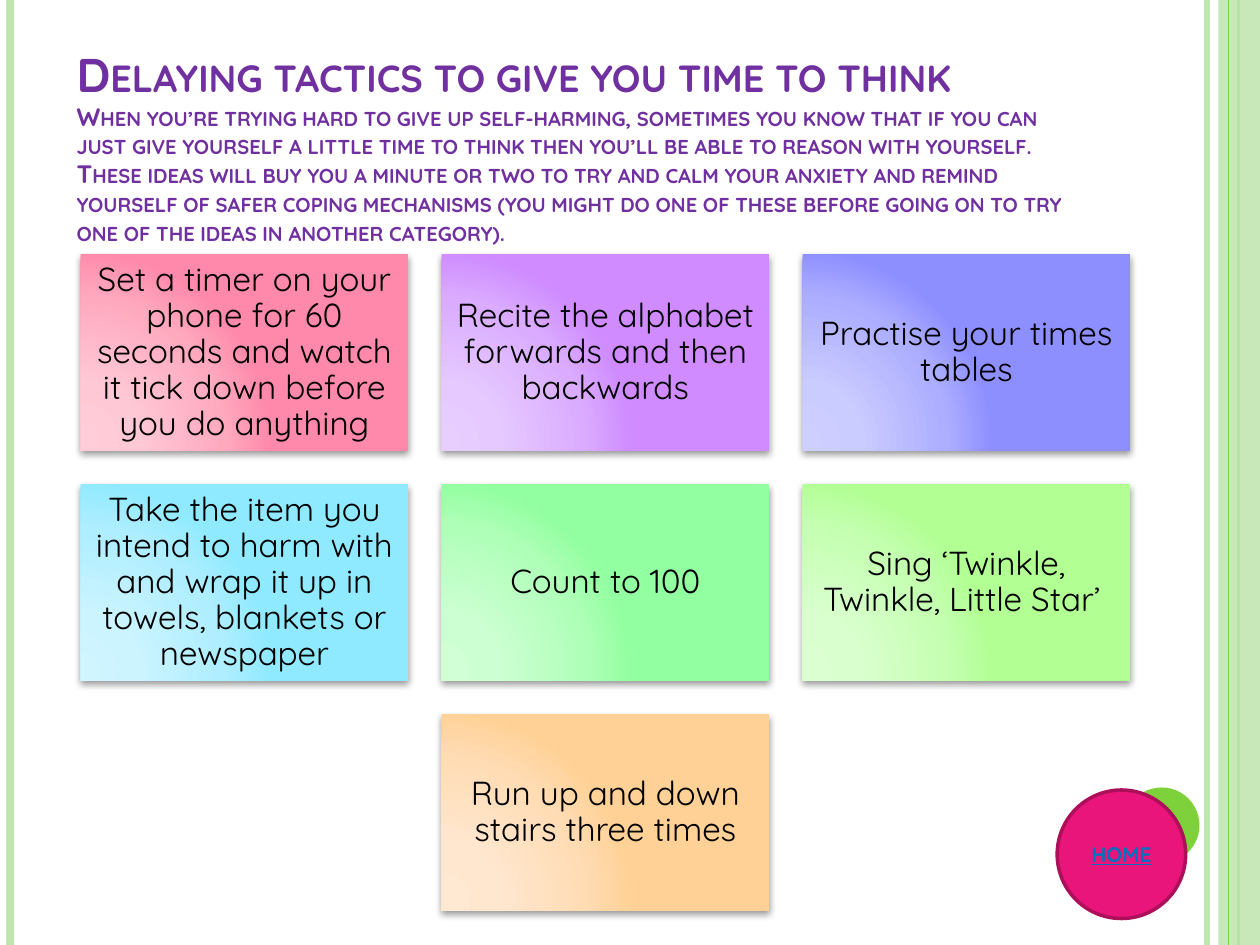
from dataclasses import dataclass

from lxml import etree
from pptx import Presentation
from pptx.dml.color import RGBColor
from pptx.enum.shapes import MSO_CONNECTOR, MSO_SHAPE
from pptx.enum.text import MSO_ANCHOR, PP_ALIGN
from pptx.oxml import parse_xml
from pptx.oxml.ns import nsdecls, qn
from pptx.util import Inches, Pt

STRAIGHT = MSO_CONNECTOR.STRAIGHT
RECTANGLE, OVAL = MSO_SHAPE.RECTANGLE, MSO_SHAPE.OVAL
MIDDLE, BOTTOM = MSO_ANCHOR.MIDDLE, MSO_ANCHOR.BOTTOM
CENTER = PP_ALIGN.CENTER


@dataclass(frozen=True)
class Theme:
    font: str = "Quicksand"
    heading: str = "7030A0"
    ink: str = "000000"
    pale_green: str = "C0E5AF"
    green: str = "7FD13B"
    pink: str = "EA157A"
    dark_pink: str = "AD105A"
    link: str = "0070C0"
    title_size: float = 27
    intro_size: float = 14.4
    tile_size: float = 19
    button_size: float = 12


THEME = Theme()


def add_plain_shape(kind, left, top, width, height, color):
    shape = slide.shapes.add_shape(
        kind, Inches(left), Inches(top), Inches(width), Inches(height))
    shape.shadow.inherit = False
    shape.fill.solid()
    shape.fill.fore_color.rgb = RGBColor.from_string(color)
    shape.line.fill.background()
    return shape


def style_text(paragraph, size, color, bold=False):
    font = paragraph.font
    font.name, font.size, font.bold = THEME.font, Pt(size), bold
    font.color.rgb = RGBColor.from_string(color)


prs = Presentation()
prs.slide_width, prs.slide_height = Inches(10), Inches(7.5)
slide = prs.slides.add_slide(prs.slide_layouts[6])

# Side stripes; None marks the place of the translucent band
stripes = [
    (9.58, THEME.pale_green, 3),
    (0.08, THEME.pale_green, 4.5),
    (9.83, THEME.green, 1.5),
    (None, THEME.pale_green, 0),
    (9.75, THEME.green, 0.75),
]
for x, color, weight in stripes:
    if x is None:
        band = add_plain_shape(RECTANGLE, 9.67, 0, 0.33, 7.5, color)
        band_color = band._element.spPr.find(qn("a:solidFill"))[0]
        etree.SubElement(band_color, qn("a:alpha"), val="87000")
        continue
    stripe = slide.shapes.add_connector(
        STRAIGHT, Inches(x), 0, Inches(x), prs.slide_height)
    stripe.line.color.rgb = RGBColor.from_string(color)
    stripe.line.width = Pt(weight)
    etree.SubElement(stripe._element.spPr, qn("a:effectLst"))

# Green dot behind the home button
add_plain_shape(OVAL, 8.92, 6.25, 0.6, 0.6, THEME.green)

# Title and introduction in small caps
heading = slide.shapes.add_textbox(
    Inches(0.51), Inches(0.76), Inches(8.17), Inches(1.25)).text_frame
heading.word_wrap = True
heading.vertical_anchor = BOTTOM
heading_line = heading.paragraphs[0]
style_text(heading_line, THEME.title_size, THEME.heading, bold=True)
heading_line.line_spacing = 0.95
title = heading_line.add_run()
title.text = "Delaying tactics to give you time to think"
heading_line.add_line_break()
intro = heading_line.add_run()
intro.text = (
    "When you’re trying hard to give up self-harming, sometimes you know that "
    "if you can just give yourself a little time to think then you’ll be able "
    "to reason with yourself. These ideas will buy you a minute or two to try "
    "and calm your anxiety and remind yourself of safer coping mechanisms (you "
    "might do one of these before going on to try one of the ideas in another "
    "category).")
intro.font.size = Pt(THEME.intro_size)
for run in (title, intro):
    run.font._element.set("cap", "small")

# Tactic tiles: column, row, text, gradient from pale to strong
tactics = [
    (0, 0, "Set a timer on your phone for 60 seconds and watch it tick down "
           "before you do anything", "FFCDD9 FFC8D5 FFA9BF FF89AA"),
    (1, 0, "Recite the alphabet forwards and then backwards",
     "E8CEFF E6C9FF DAABFF CF8BFF"),
    (2, 0, "Practise your times tables", "CFCFFF CACBFF ADAEFF 8E8FFF"),
    (0, 1, "Take the item you intend to harm with and wrap it up in towels, "
           "blankets or newspaper", "D0F5FF CBF4FF AEEEFF 90EAFF"),
    (1, 1, "Count to 100", "D1FFD6 CCFFD2 B0FFB9 92FFA0"),
    (2, 1, "Sing ‘Twinkle, Twinkle, Little Star’ ",
     "DCFFD2 D9FFCE C5FFB2 B2FF94"),
    (1, 2, "Run up and down stairs three times",
     "FFE9D3 FFE7CF FFDCB4 FFD196"),
]
STOPS = (0, 30, 75, 100)
TILE_W, TILE_H, GAP = 2.6, 1.56, 0.265

for column, row, tactic, shades in tactics:
    tile = add_plain_shape(
        RECTANGLE, 0.64 + column * (TILE_W + GAP),
        2.02 + row * (TILE_H + GAP), TILE_W, TILE_H, THEME.ink)
    stops = "".join(
        f'<a:gs pos="{stop * 1000}"><a:srgbClr val="{shade}"/></a:gs>'
        for stop, shade in zip(STOPS, shades.split()))
    properties = tile._element.spPr
    properties.replace(properties.find(qn("a:solidFill")), parse_xml(
        f'<a:gradFill {nsdecls("a")} rotWithShape="1"><a:gsLst>{stops}</a:gsLst>'
        '<a:path path="circle"><a:fillToRect l="5000" t="100000" r="120000" '
        'b="10000"/></a:path></a:gradFill>'))
    properties.find(qn("a:effectLst")).append(parse_xml(
        f'<a:outerShdw {nsdecls("a")} blurRad="{Pt(4)}" dist="{Pt(2)}" '
        'dir="5400000" rotWithShape="0"><a:srgbClr val="000000">'
        '<a:alpha val="40000"/></a:srgbClr></a:outerShdw>'))

    frame = tile.text_frame
    frame.word_wrap = True
    frame.vertical_anchor = MIDDLE
    frame.margin_left = frame.margin_right = Inches(0.08)
    frame.margin_top = frame.margin_bottom = Inches(0.08)
    frame.text = tactic
    tactic_line = frame.paragraphs[0]
    tactic_line.alignment = CENTER
    tactic_line.line_spacing = 0.9
    style_text(tactic_line, THEME.tile_size, THEME.ink)

# Home button
home = add_plain_shape(OVAL, 8.39, 6.27, 1.02, 1.02, THEME.pink)
home.line.color.rgb = RGBColor.from_string(THEME.dark_pink)
home.line.width = Pt(2)
home.text_frame.vertical_anchor = MIDDLE
home.text_frame.text = "HOME"
home_label = home.text_frame.paragraphs[0]
home_label.alignment = CENTER
style_text(home_label, THEME.button_size, THEME.link, bold=True)
home_label.font.underline = True

prs.save("out.pptx")
